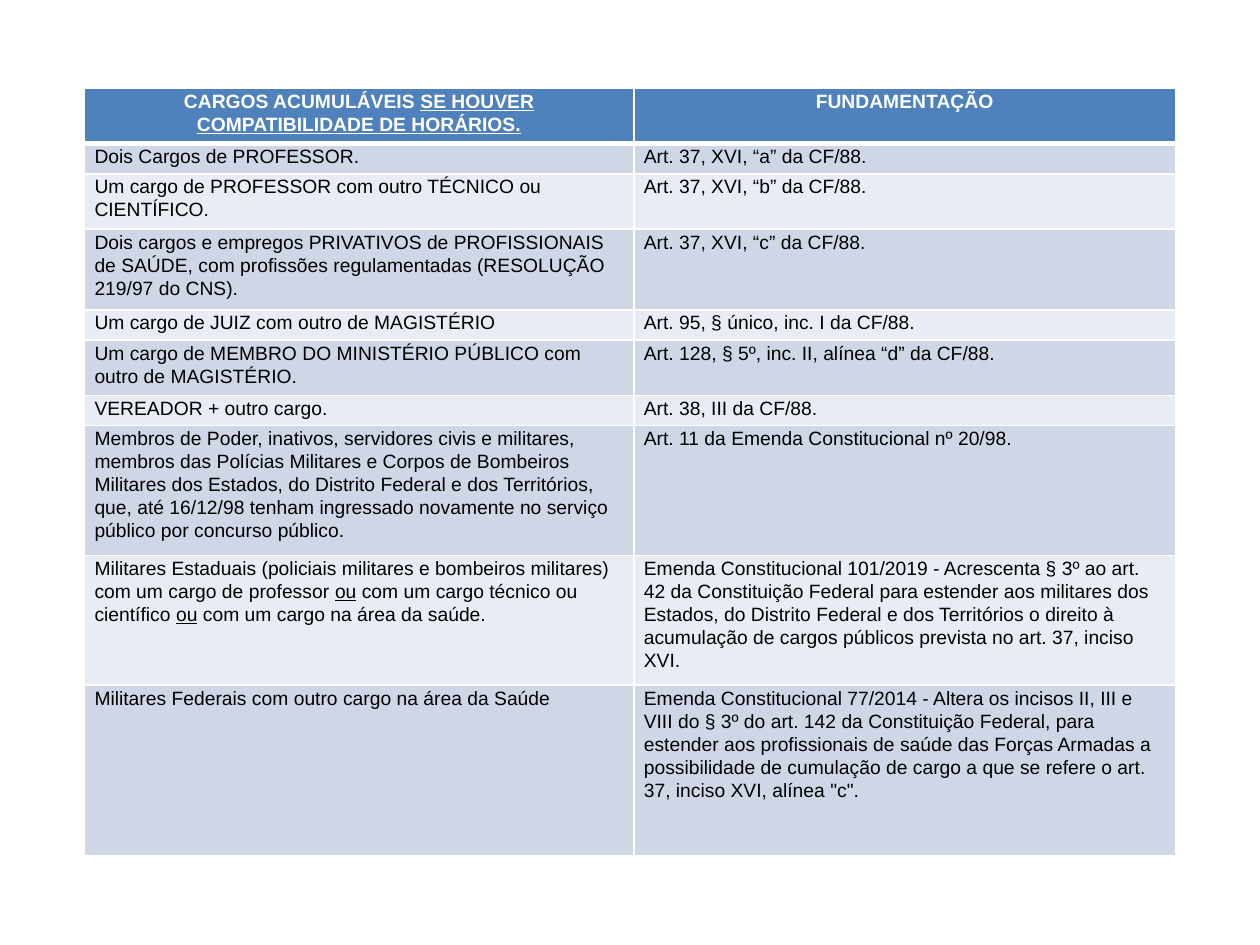
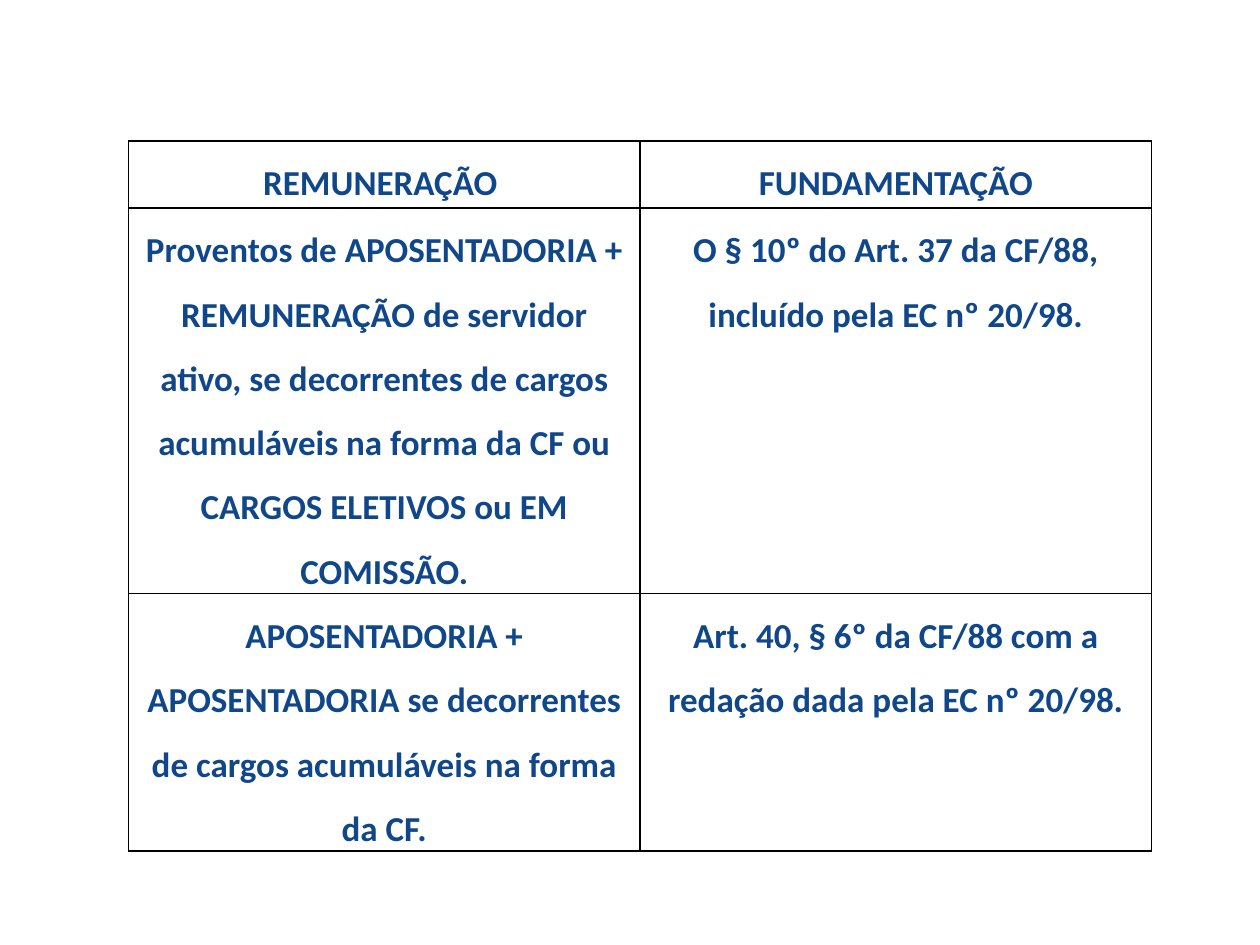
from lxml import etree
from pptx import Presentation
from pptx.dml.color import RGBColor
from pptx.enum import text
from pptx.oxml import ns
from pptx.util import Inches, Pt

# Shared colours
WHITE, BLACK, NAVY = "FFFFFF", "000000", "10478B"
HEADER_BLUE, BAND_DARK, BAND_LIGHT = "4F81BD", "CFD7E7", "E8ECF4"
SIDES = ("L", "R", "T", "B")

# Underscores enclose underlined words
POSITIONS = [
    ("CARGOS ACUMULÁVEIS _SE HOUVER COMPATIBILIDADE DE HORÁRIOS._", "FUNDAMENTAÇÃO"),
    ("Dois Cargos de PROFESSOR.", "Art. 37, XVI, “a” da CF/88."),
    ("Um cargo de PROFESSOR com outro TÉCNICO ou CIENTÍFICO.",
     "Art. 37, XVI, “b” da CF/88."),
    ("Dois cargos e empregos PRIVATIVOS de PROFISSIONAIS de SAÚDE, com profissões "
     "regulamentadas (RESOLUÇÃO 219/97 do CNS).", "Art. 37, XVI, “c” da CF/88."),
    ("Um cargo de JUIZ com outro de MAGISTÉRIO", "Art. 95, § único, inc. I da CF/88."),
    ("Um cargo de MEMBRO DO MINISTÉRIO PÚBLICO com outro de MAGISTÉRIO.",
     "Art. 128, § 5º, inc. II, alínea “d” da CF/88."),
    ("VEREADOR + outro cargo.", "Art. 38, III da CF/88."),
    ("Membros de Poder, inativos, servidores civis e militares, membros das Polícias "
     "Militares e Corpos de Bombeiros Militares dos Estados, do Distrito Federal e dos "
     "Territórios, que, até 16/12/98 tenham ingressado novamente no serviço público por "
     "concurso público.", "Art. 11 da Emenda Constitucional nº 20/98."),
    ("Militares Estaduais (policiais militares e bombeiros militares) com um cargo de "
     "professor _ou_ com um cargo técnico ou científico _ou_ com um cargo na área da saúde.",
     "Emenda Constitucional 101/2019 - Acrescenta § 3º ao art. 42 da Constituição Federal "
     "para estender aos militares dos Estados, do Distrito Federal e dos Territórios o "
     "direito à acumulação de cargos públicos prevista no art. 37, inciso XVI."),
    ("Militares Federais com outro cargo na área da Saúde",
     "Emenda Constitucional 77/2014 - Altera os incisos II, III e VIII do § 3º do art. 142 "
     "da Constituição Federal, para estender aos profissionais de saúde das Forças Armadas "
     "a possibilidade de cumulação de cargo a que se refere o art. 37, inciso XVI, "
     'alínea "c".'),
]
PAYMENTS = [
    ("REMUNERAÇÃO ", "FUNDAMENTAÇÃO"),
    ("Proventos de APOSENTADORIA + REMUNERAÇÃO de servidor ativo, se decorrentes de cargos "
     "acumuláveis na forma da CF ou CARGOS ELETIVOS ou EM COMISSÃO.",
     "O § 10º do Art. 37 da CF/88, incluído pela EC nº 20/98."),
    ("APOSENTADORIA + APOSENTADORIA se decorrentes de cargos acumuláveis na forma da CF.",
     "Art. 40, § 6º da CF/88 com a redação dada pela EC nº 20/98."),
]


def rgb(value):
    return RGBColor.from_string(value)


def apply(target, formats):
    for name, value in formats.items():
        setattr(target, name, value)


def set_border(cell, side, color, width):
    properties = cell._tc.get_or_add_tcPr()
    line = etree.SubElement(properties, ns.qn(f"a:ln{side}"), w=str(Pt(width)))
    fill = etree.SubElement(line, ns.qn("a:solidFill"))
    etree.SubElement(fill, ns.qn("a:srgbClr"), val=color)


def write_cell(cell, content, style):
    """Fill one cell with text; style holds cell, para, font and color."""
    apply(cell, style["cell"])
    para = cell.text_frame.paragraphs[0]
    apply(para, style["para"])
    for index, piece in enumerate(content.split("_")):
        if piece:
            span = para.add_run()
            span.text = piece
            apply(span.font, style["font"])
            span.font.color.rgb = rgb(style["color"])
            if index % 2:
                span.font.underline = True


def add_grid(page, left, top, widths, heights, rows, style_for):
    """Place a table whose look is given row by row by style_for."""
    frame = page.shapes.add_table(len(rows), len(widths), Inches(left), Inches(top),
                                  Inches(sum(widths)), Inches(sum(heights)))
    table = frame.table
    table.horz_banding = False
    for column, width in zip(table.columns, widths):
        column.width = Inches(width)
    for index, (row, height, contents) in enumerate(zip(table.rows, heights, rows)):
        row.height = Inches(height)
        style = style_for(index)
        for cell, content in zip(row.cells, contents):
            for side in SIDES:
                set_border(cell, side, style["border"], style["widths"].get(side, 1))
            if style["fill"]:
                cell.fill.solid()
                cell.fill.fore_color.rgb = rgb(style["fill"])
            else:
                cell.fill.background()
            write_cell(cell, content, style)


def position_style(index):
    """Blue header with a thick rule below, then alternating bands."""
    header = index == 0
    align = text.PP_ALIGN.CENTER if header else text.PP_ALIGN.LEFT
    band = BAND_DARK if index % 2 else BAND_LIGHT
    return {
        "cell": {"margin_left": Inches(0.08), "margin_right": Inches(0.08),
                 "margin_top": Inches(0.01), "margin_bottom": 0},
        "para": {"alignment": align, "line_spacing": 1.07},
        "font": {"name": "Arial", "size": Pt(11), "bold": header},
        "color": WHITE if header else BLACK,
        "fill": HEADER_BLUE if header else band,
        "border": WHITE,
        "widths": {0: {"B": 3}, 1: {"T": 3}}.get(index, {}),
    }


def payment_style(index):
    """Plain black grid with bold navy text in every row."""
    return {
        "cell": {"margin_left": Inches(0.07), "margin_right": Inches(0.07),
                 "margin_top": 0, "margin_bottom": 0},
        "para": {"alignment": text.PP_ALIGN.CENTER, "line_spacing": 1.5},
        "font": {"name": "Calibri", "size": Pt(20), "bold": True},
        "color": NAVY, "fill": None, "border": BLACK, "widths": {},
    }


def main():
    deck = Presentation()
    deck.slide_width, deck.slide_height = Inches(10), Inches(7.5)
    blank = deck.slide_layouts[6]

    # Positions that may be held together
    one, two, three, five = 0.24, 0.44, 0.64, 1.03
    add_grid(deck.slides.add_slide(blank), 0.67, 0.7, [4.36, 4.3],
             [two, one, two, three, one, two, one, five, five, 1.35],
             POSITIONS, position_style)

    # Pensions and pay that may be received together
    add_grid(deck.slides.add_slide(blank), 1.02, 1.12, [4.06, 4.06],
             [0.53, 2.65, 1.59], PAYMENTS, payment_style)

    deck.save("out.pptx")


if __name__ == "__main__":
    main()
